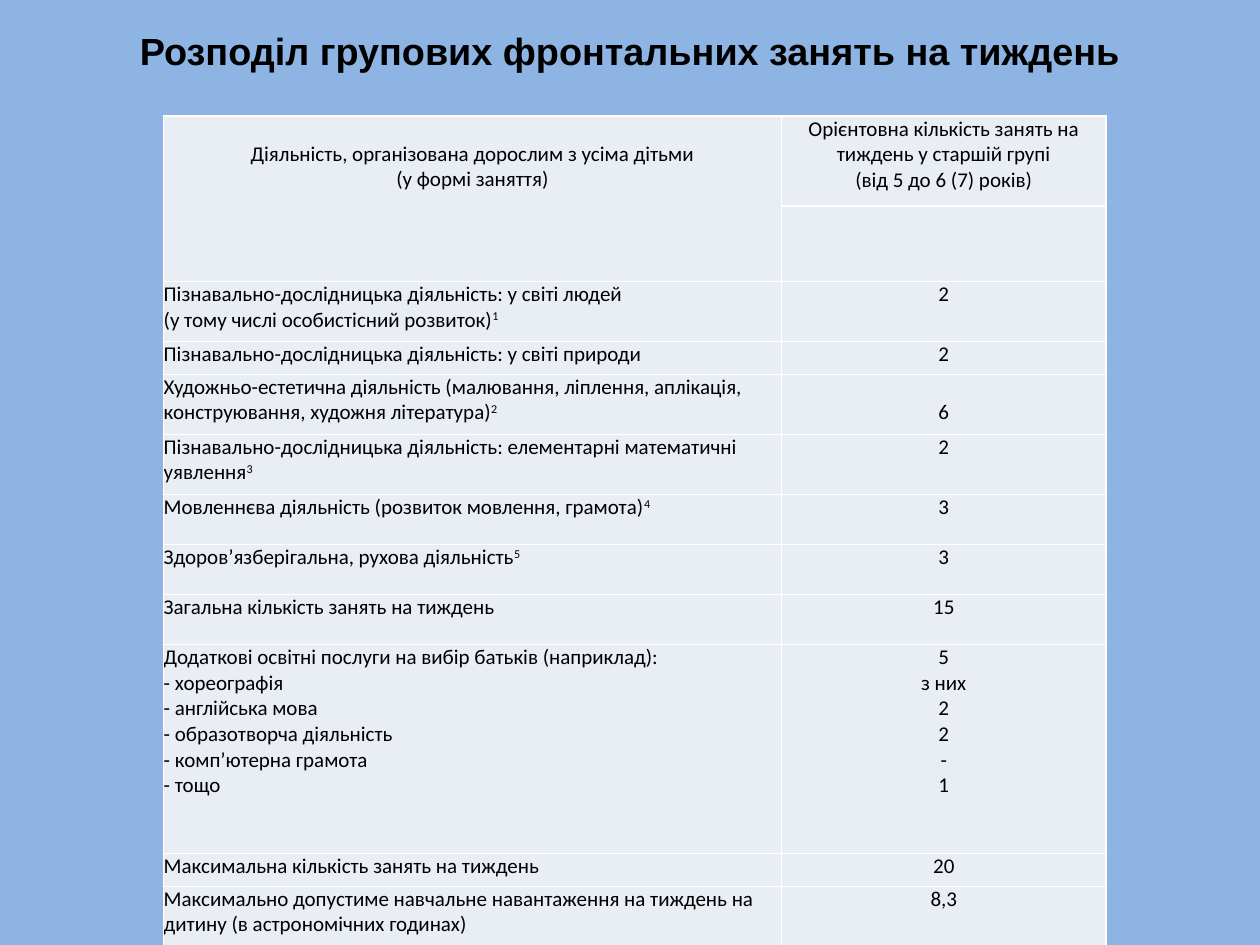
from dataclasses import dataclass

from lxml.etree import SubElement
from pptx import Presentation
from pptx.dml.color import RGBColor
from pptx.enum.text import MSO_ANCHOR, PP_ALIGN
from pptx.oxml.ns import qn
from pptx.slide import Slide
from pptx.table import Table, _Cell
from pptx.util import Cm, Pt

COLORS = {
    "background": "8EB4E3",
    "cell": "E9EDF4",
    "border": "FFFFFF",
    "text": "000000",
}
COLUMN_WIDTHS = (12.45, 6.55)
LINE_HEIGHT = 0.51


@dataclass(frozen=True)
class ActivityRow:
    height: float
    activity: tuple[str, ...] = ()
    lessons: tuple[str, ...] = ()
    footnote: str = ""
    activity_top: float = 0
    lessons_top: float = 0
    activity_align: PP_ALIGN = PP_ALIGN.LEFT


ROWS = (
    ActivityRow(
        1.81,
        ("Діяльність, організована дорослим з усіма дітьми", "(у формі заняття)"),
        ("Орієнтовна кількість занять на тиждень у старшій групі", "(від 5 до 6 (7) років)"),
        activity_top=LINE_HEIGHT,
        activity_align=PP_ALIGN.CENTER,
    ),
    ActivityRow(0.81),
    ActivityRow(
        1.21,
        ("Пізнавально-дослідницька діяльність: у світі людей", "(у тому числі особистісний розвиток)"),
        ("2",),
        "1",
    ),
    ActivityRow(0.66, ("Пізнавально-дослідницька діяльність: у світі природи",), ("2",)),
    ActivityRow(
        1.21,
        ("Художньо-естетична діяльність (малювання, ліплення, аплікація, "
         "конструювання, художня література)",),
        ("6",),
        "2",
        lessons_top=LINE_HEIGHT,
    ),
    ActivityRow(
        1.21,
        ("Пізнавально-дослідницька діяльність: елементарні математичні уявлення",),
        ("2",),
        "3",
    ),
    ActivityRow(1.01, ("Мовленнєва діяльність (розвиток мовлення, грамота)",), ("3",), "4"),
    ActivityRow(1.01, ("Здоров’язберігальна, рухова діяльність",), ("3",), "5"),
    ActivityRow(1.01, ("Загальна кількість занять на тиждень",), ("15",)),
    ActivityRow(
        4.21,
        (
            "Додаткові освітні послуги на вибір батьків (наприклад):",
            "- хореографія",
            "- англійська мова",
            "- образотворча діяльність",
            "- комп’ютерна грамота",
            "- тощо",
        ),
        ("5", "з них", "2", "2", "-", "1"),
    ),
    ActivityRow(0.66, ("Максимальна кількість занять на тиждень",), ("20",)),
    ActivityRow(
        1.21,
        ("Максимально допустиме навчальне навантаження на тиждень на "
         "дитину (в астрономічних годинах)",),
        ("8,3",),
    ),
)


def color(name: str) -> RGBColor:
    return RGBColor.from_string(COLORS[name])


def style_paragraph(paragraph, font_name: str, size: float, align: PP_ALIGN) -> None:
    paragraph.alignment = align
    paragraph.font.name = font_name
    paragraph.font.size = Pt(size)
    paragraph.font.color.rgb = color("text")


def style_cell(cell: _Cell, top: float) -> None:
    cell.margin_left = cell.margin_right = cell.margin_bottom = Cm(0)
    cell.margin_top = Cm(top)
    properties = cell._tc.get_or_add_tcPr()
    for side in ("lnL", "lnR", "lnT", "lnB"):
        border = SubElement(properties, qn(f"a:{side}"), w=str(Pt(1)))
        line_fill = SubElement(border, qn("a:solidFill"))
        SubElement(line_fill, qn("a:srgbClr"), val=COLORS["border"])
    cell.fill.solid()
    cell.fill.fore_color.rgb = color("cell")


def write_cell(
    cell: _Cell, lines: tuple[str, ...], align: PP_ALIGN, top: float, footnote: str = ""
) -> None:
    style_cell(cell, top)
    cell.text_frame.text = "\n".join(lines)
    for paragraph in cell.text_frame.paragraphs:
        style_paragraph(paragraph, "Calibri", 12, align)
    if footnote:
        mark = cell.text_frame.paragraphs[-1].add_run()
        mark.text = footnote
        mark._r.get_or_add_rPr().set("baseline", "30000")


def add_title(slide: Slide, text: str) -> None:
    title = slide.shapes.add_textbox(Cm(1.27), Cm(0.76), Cm(22.86), Cm(1.37))
    frame = title.text_frame
    frame.word_wrap = True
    frame.vertical_anchor = MSO_ANCHOR.MIDDLE
    frame.margin_top = Cm(0)
    frame.margin_bottom = Cm(0.86)
    frame.text = text
    heading = frame.paragraphs[0]
    style_paragraph(heading, "Arial", 21.6, PP_ALIGN.CENTER)
    heading.font.bold = True


def add_schedule(slide: Slide) -> Table:
    schedule = slide.shapes.add_table(
        len(ROWS), len(COLUMN_WIDTHS), Cm(3.3), Cm(2.34),
        Cm(sum(COLUMN_WIDTHS)), Cm(sum(row.height for row in ROWS)),
    ).table
    schedule.first_row = False
    schedule.horz_banding = False
    for column, width in zip(schedule.columns, COLUMN_WIDTHS):
        column.width = Cm(width)
    for index, row in enumerate(ROWS):
        schedule.rows[index].height = Cm(row.height)
        write_cell(schedule.cell(index, 0), row.activity, row.activity_align,
                   row.activity_top, row.footnote)
        write_cell(schedule.cell(index, 1), row.lessons, PP_ALIGN.CENTER, row.lessons_top)
    schedule.cell(0, 0).merge(schedule.cell(1, 0))
    return schedule


def main() -> None:
    presentation = Presentation()
    presentation.slide_width = Cm(25.4)
    presentation.slide_height = Cm(19.05)
    slide = presentation.slides.add_slide(presentation.slide_layouts[6])
    slide.background.fill.solid()
    slide.background.fill.fore_color.rgb = color("background")
    add_title(slide, "Розподіл групових фронтальних занять на тиждень")
    add_schedule(slide)
    presentation.save("out.pptx")


if __name__ == "__main__":
    main()
